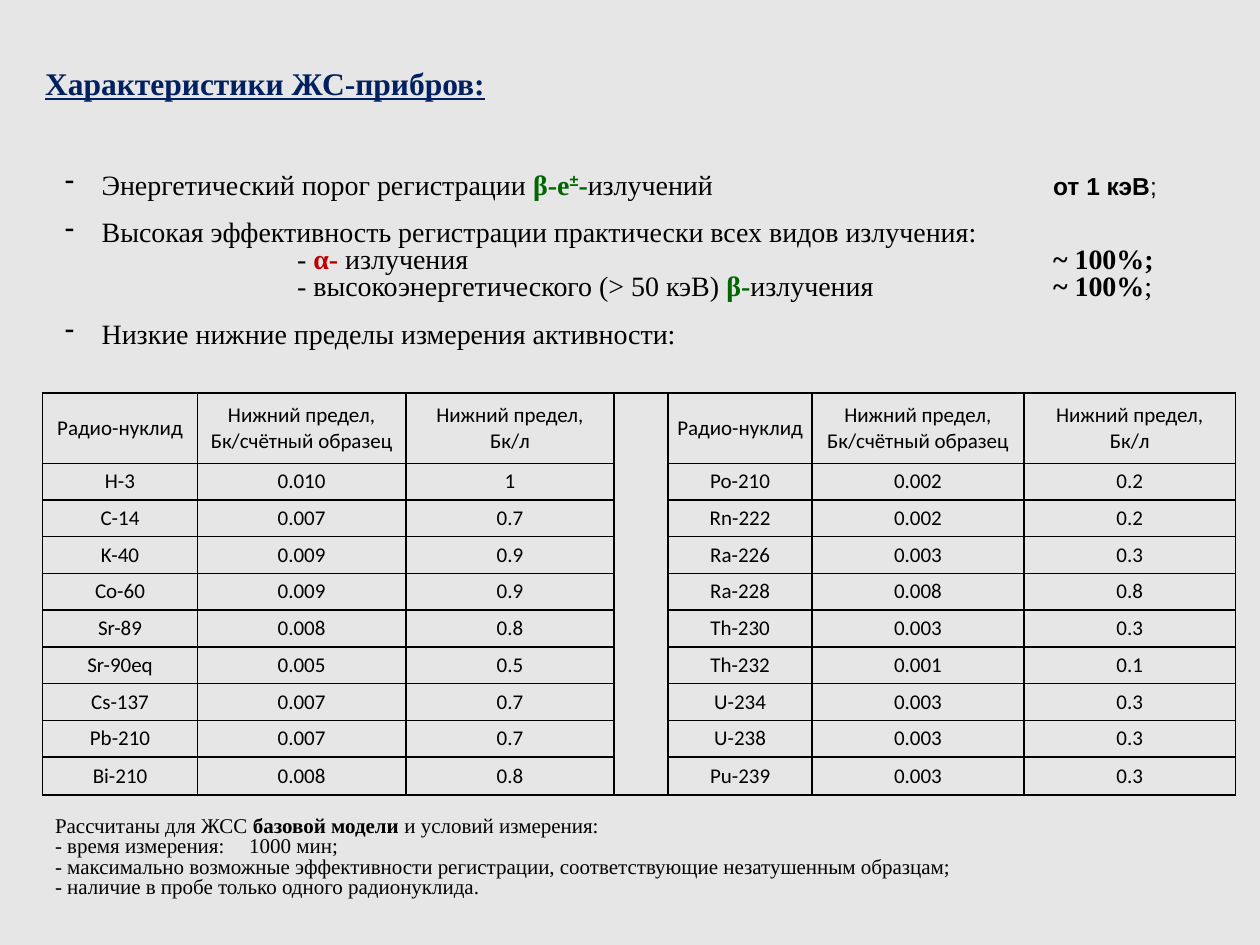
from lxml.etree import SubElement
from pptx import Presentation
from pptx.dml.color import RGBColor
from pptx.enum.text import MSO_ANCHOR, MSO_AUTO_SIZE, PP_ALIGN
from pptx.oxml.ns import qn
from pptx.util import Cm, Pt

BACKGROUND = RGBColor(0xE6, 0xE6, 0xE6)
BLACK = RGBColor(0, 0, 0)
NAVY = RGBColor(0x00, 0x20, 0x60)
GREEN = RGBColor(0x00, 0x66, 0x00)
RED = RGBColor(0xC0, 0x00, 0x00)

SERIF, SANS, TABLE_FONT = "Times New Roman", "Arial", "Calibri"
TAB_STOPS = (Cm(5.08), Cm(20.32))

LIMIT_HEADS = ["Нижний предел,\nБк/счётный образец", "Нижний предел,\nБк/л"]
HEADER = ["Радио-нуклид", *LIMIT_HEADS]
LEFT_LIMITS = [
    ("H-3", "0.010", "1"), ("C-14", "0.007", "0.7"), ("K-40", "0.009", "0.9"),
    ("Co-60", "0.009", "0.9"), ("Sr-89", "0.008", "0.8"), ("Sr-90eq", "0.005", "0.5"),
    ("Cs-137", "0.007", "0.7"), ("Pb-210", "0.007", "0.7"), ("Bi-210", "0.008", "0.8"),
]
RIGHT_LIMITS = [
    ("Po-210", "0.002", "0.2"), ("Rn-222", "0.002", "0.2"), ("Ra-226", "0.003", "0.3"),
    ("Ra-228", "0.008", "0.8"), ("Th-230", "0.003", "0.3"), ("Th-232", "0.001", "0.1"),
    ("U-234", "0.003", "0.3"), ("U-238", "0.003", "0.3"), ("Pu-239", "0.003", "0.3"),
]
GAP_COL = 3


class SlideBuilder:
    def __init__(self, slide):
        self.slide = slide
        fill = slide.background.fill
        fill.solid()
        fill.fore_color.rgb = BACKGROUND

    def text_box(self, left, top, width, height):
        tf = self.slide.shapes.add_textbox(left, top, width, height).text_frame
        tf.word_wrap = True
        tf.auto_size = MSO_AUTO_SIZE.SHAPE_TO_FIT_TEXT
        return tf

    def paragraph(self, tf, first=False, before=0):
        p = tf.paragraphs[0] if first else tf.add_paragraph()
        p.line_spacing = 0.8
        p.space_before = Pt(before)
        return p

    def bullet(self, tf, before=12):
        """Add a dash item with tab stops for the sub-items and the values."""
        p = self.paragraph(tf, before=before)
        pPr = p._p.get_or_add_pPr()
        pPr.set("marL", str(Cm(1)))
        pPr.set("indent", str(-Cm(0.6)))
        SubElement(pPr, qn("a:buFontTx"))
        SubElement(pPr, qn("a:buChar"), char="-")
        tabs = SubElement(pPr, qn("a:tabLst"))
        for stop in TAB_STOPS:
            SubElement(tabs, qn("a:tab"), pos=str(stop), algn="l")
        return p

    def run(self, p, text, size=16, color=BLACK, bold=False, font=SERIF):
        r = p.add_run()
        r.text = text
        r.font.size, r.font.name, r.font.bold = Pt(size), font, bold
        r.font.color.rgb = color
        return r

    def table(self, left, top, col_widths, row_heights, rows):
        table = self.slide.shapes.add_table(
            len(rows), len(col_widths), left, top, sum(col_widths), sum(row_heights)).table
        table.first_row = table.horz_banding = False
        for col, width in zip(table.columns, col_widths):
            col.width = width
        for row, height in zip(table.rows, row_heights):
            row.height = height
        for i, row in enumerate(rows):
            for j, text in enumerate(row):
                self.cell(table.cell(i, j), text)
        return table

    def cell(self, cell, text):
        cell.margin_left = cell.margin_right = Cm(0.18)
        cell.margin_top = cell.margin_bottom = 0
        cell.vertical_anchor = MSO_ANCHOR.MIDDLE
        tf = cell.text_frame
        for n, line in enumerate(text.split("\n")):
            p = tf.add_paragraph() if n else tf.paragraphs[0]
            p.alignment = PP_ALIGN.CENTER
            if line:
                self.run(p, line, size=12, font=TABLE_FONT)
        tcPr = cell._tc.get_or_add_tcPr()
        for side in ("a:lnL", "a:lnR", "a:lnT", "a:lnB"):
            ln = SubElement(tcPr, qn(side), w=str(Pt(1)))
            fill = SubElement(ln, qn("a:solidFill"))
            SubElement(fill, qn("a:srgbClr"), val=str(BLACK))
        cell.fill.background()


def add_characteristics(s):
    tf = s.text_box(Cm(0.66), Cm(1.32), Cm(24.41), Cm(5.94))
    p = s.paragraph(tf, first=True, before=12)
    s.run(p, "Характеристики ЖС-прибров:", 18, NAVY, True).font.underline = True

    p = s.bullet(tf, before=41)
    s.run(p, " Энергетический порог регистрации ")
    s.run(p, "β-e", color=GREEN, bold=True)
    r = s.run(p, "±", color=GREEN, bold=True, font=SANS)
    r.font._element.set("baseline", "30000")
    s.run(p, "-", color=GREEN, bold=True)
    s.run(p, "излучений\t")
    s.run(p, "от 1 кэВ", 14, bold=True, font=SANS)
    s.run(p, ";", 14, font=SANS)

    p = s.bullet(tf)
    s.run(p, " Высокая эффективность регистрации практически всех видов излучения:")
    p.add_line_break()
    s.run(p, "\t- ")
    s.run(p, "α- ", color=RED, bold=True)
    s.run(p, "излучения\t")
    s.run(p, "~ 100%;", bold=True)
    p.add_line_break()
    s.run(p, "\t- высокоэнергетического (> 50 кэВ) ")
    s.run(p, "β-", color=GREEN, bold=True)
    s.run(p, "излучения\t")
    s.run(p, "~ 100%", bold=True)
    s.run(p, ";")

    s.run(s.bullet(tf), " Низкие нижние пределы измерения активности:")


def add_limits(s):
    rows = [[*HEADER, "", *HEADER]]
    rows += [[*a, "", *b] for a, b in zip(LEFT_LIMITS, RIGHT_LIMITS)]
    widths = [Cm(w) for w in (3.12, 4.2, 4.2, 1.09, 2.9, 4.27, 4.27)]
    heights = [Cm(1.42)] + [Cm(0.74)] * len(LEFT_LIMITS)
    table = s.table(Cm(0.86), Cm(7.92), widths, heights, rows)
    table.cell(0, GAP_COL).merge(table.cell(len(rows) - 1, GAP_COL))


def add_conditions(s):
    tf = s.text_box(Cm(0.86), Cm(16.36), Cm(24), Cm(1.9))
    p = s.paragraph(tf, first=True)
    s.run(p, "Рассчитаны для ЖСС ", 12)
    s.run(p, "базовой модели ", 12, bold=True)
    s.run(p, "и условий измерения:", 12)
    for line in (
        "- время измерения:\t 1000 мин;",
        "- максимально возможные эффективности регистрации, соответствующие незатушенным образцам;",
        "- наличие в пробе только одного радионуклида.",
    ):
        s.run(s.paragraph(tf), line, 12)


def main():
    prs = Presentation()
    prs.slide_width, prs.slide_height = Cm(25.4), Cm(19.05)
    s = SlideBuilder(prs.slides.add_slide(prs.slide_layouts[6]))
    add_characteristics(s)
    add_limits(s)
    add_conditions(s)
    prs.save("out.pptx")


if __name__ == "__main__":
    main()
